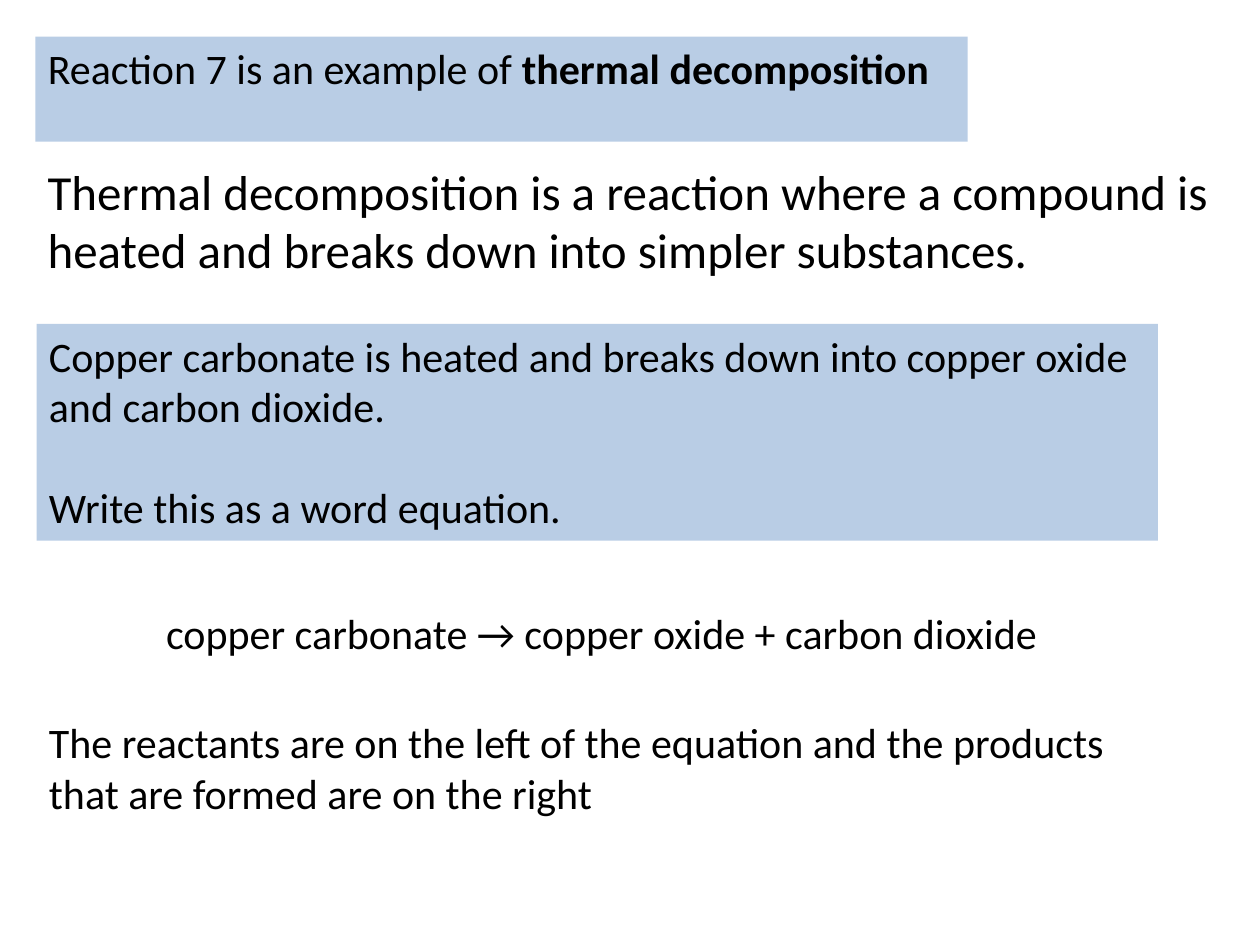
from dataclasses import dataclass

from pptx import Presentation
from pptx.dml.color import RGBColor
from pptx.enum import text
from pptx.util import Inches, Pt


@dataclass(frozen=True)
class Theme:
    font: str = "Calibri"
    ink: RGBColor = RGBColor(0x00, 0x00, 0x00)
    panel: RGBColor = RGBColor(0xB9, 0xCD, 0xE5)
    body_size: int = 24
    definition_size: int = 28
    paragraph_gap: int = 29


def add_span(para, words, *, theme, size, bold=False):
    span = para.add_run()
    span.text = words
    span.font.name = theme.font
    span.font.size = Pt(size)
    span.font.bold = bold
    span.font.color.rgb = theme.ink


class SlideBuilder:
    def __init__(self, slide, theme):
        self.slide = slide
        self.theme = theme

    def title(self, place, paragraphs):
        box = self.slide.shapes.title
        box.left, box.top, box.width, box.height = map(Inches, place)
        self._fill_in(box, paragraphs, self.theme.body_size, panel=True)

    def text_box(self, place, paragraphs, size=None, panel=False):
        box = self.slide.shapes.add_textbox(*map(Inches, place))
        self._fill_in(box, paragraphs, size or self.theme.body_size, panel)

    def _fill_in(self, box, paragraphs, size, panel):
        """Write paragraphs, each a list of (words, bold) pairs, into a box."""
        if panel:
            box.fill.solid()
            box.fill.fore_color.rgb = self.theme.panel
        frame = box.text_frame
        frame.word_wrap = True
        frame.auto_size = text.MSO_AUTO_SIZE.SHAPE_TO_FIT_TEXT
        frame.vertical_anchor = text.MSO_ANCHOR.TOP
        for index, spans in enumerate(paragraphs):
            para = frame.add_paragraph() if index else frame.paragraphs[0]
            para.alignment = text.PP_ALIGN.LEFT
            if index:
                para.space_before = Pt(self.theme.paragraph_gap)
            for words, bold in spans:
                add_span(para, words, theme=self.theme, size=size, bold=bold)


def main():
    deck = Presentation()
    deck.slide_width, deck.slide_height = Inches(10), Inches(7.5)
    title_only = deck.slide_layouts[5]
    theme = Theme()
    page = SlideBuilder(deck.slides.add_slide(title_only), theme)

    page.title(
        (0.28, 0.29, 7.4, 0.5),
        [[("Reaction 7 is an example of ", False), ("thermal decomposition", True)]],
    )
    page.text_box(
        (0.28, 1.23, 9.72, 1.04),
        [[("Thermal decomposition is a reaction where a compound is heated "
           "and breaks down into simpler substances.", False)]],
        size=theme.definition_size,
    )
    page.text_box(
        (0.29, 2.57, 8.9, 1.72),
        [
            [("Copper carbonate is heated and breaks down into copper oxide "
              "and carbon dioxide.", False)],
            [("Write this as a word equation.", False)],
        ],
        panel=True,
    )
    page.text_box(
        (1.22, 4.77, 7.48, 0.5),
        [[("copper carbonate → copper oxide + carbon dioxide", False)]],
    )
    page.text_box(
        (0.29, 5.64, 8.96, 0.91),
        [[("The reactants are on the left of the equation and the products "
           "that are formed are on the right", False)]],
    )
    deck.save("out.pptx")


if __name__ == "__main__":
    main()
